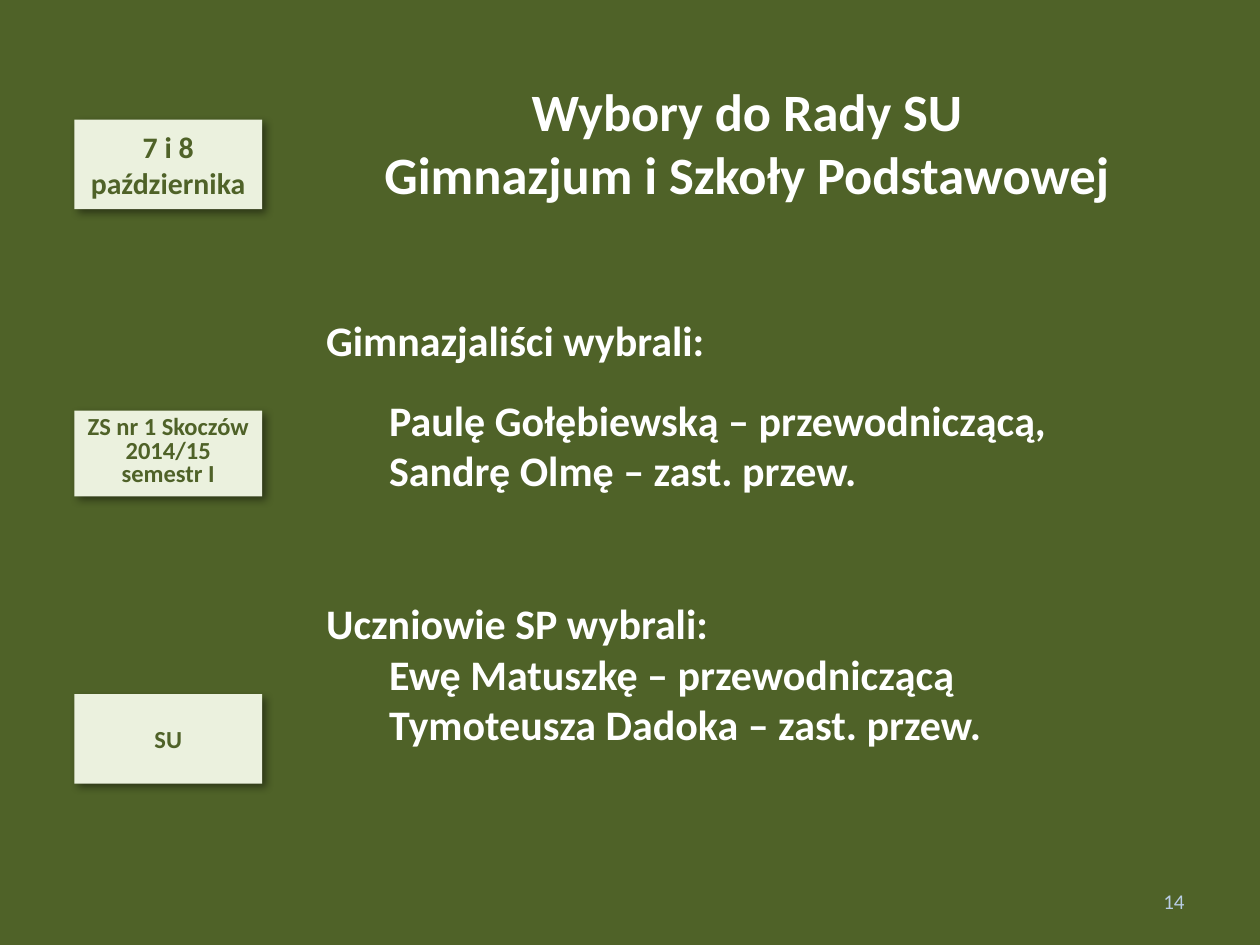
from dataclasses import dataclass

from lxml import etree
from pptx import Presentation
from pptx.dml.color import RGBColor
from pptx.enum.shapes import MSO_SHAPE
from pptx.enum.text import MSO_ANCHOR, PP_ALIGN
from pptx.oxml.ns import qn
from pptx.util import Inches, Pt

RECTANGLE = MSO_SHAPE.RECTANGLE
TOP, MIDDLE = MSO_ANCHOR.TOP, MSO_ANCHOR.MIDDLE
LEFT, CENTER, RIGHT = PP_ALIGN.LEFT, PP_ALIGN.CENTER, PP_ALIGN.RIGHT


@dataclass(frozen=True)
class Theme:
    font: str = "Calibri"
    green: RGBColor = RGBColor(0x4F, 0x62, 0x28)
    pale: RGBColor = RGBColor(0xEB, 0xF1, 0xDE)
    white: RGBColor = RGBColor(0xFF, 0xFF, 0xFF)
    number: RGBColor = RGBColor(0xB9, 0xCD, 0xE5)
    title_size: Pt = Pt(30)
    body_size: Pt = Pt(24)
    date_size: Pt = Pt(17)
    tag_size: Pt = Pt(14)
    number_size: Pt = Pt(12)


THEME = Theme()


def write_lines(frame, lines, size, color, align, anchor=MIDDLE, bold=True):
    """Fill a text frame with one paragraph per line and return the paragraphs."""
    frame.word_wrap = True
    frame.vertical_anchor = anchor
    frame.text = "\n".join(lines)
    for paragraph in frame.paragraphs:
        paragraph.alignment = align
        font = paragraph.font
        font.name, font.size, font.bold = THEME.font, size, bold
        font.color.rgb = color
    return frame.paragraphs


def add_panel(slide, box, fill):
    panel = slide.shapes.add_shape(RECTANGLE, *map(Inches, box))
    panel.shadow.inherit = False
    panel.fill.solid()
    panel.fill.fore_color.rgb = fill
    panel.line.fill.background()
    return panel


def add_drop_shadow(panel):
    effects = panel._element.spPr.find(qn("a:effectLst"))
    shadow = etree.SubElement(
        effects, qn("a:outerShdw"), blurRad=str(Pt(5)), dist=str(Pt(3)),
        dir=str(45 * 60000), algn="tl", rotWithShape="0")
    black = etree.SubElement(shadow, qn("a:srgbClr"), val="000000")
    etree.SubElement(black, qn("a:alpha"), val="43000")


def add_tag(slide, box, lines, size, anchor=MIDDLE, spacing=1.0):
    tag = add_panel(slide, box, THEME.pale)
    add_drop_shadow(tag)
    for line in write_lines(tag.text_frame, lines, size, THEME.green, CENTER, anchor):
        line.line_spacing = spacing


def add_title(slide, box):
    title = add_panel(slide, box, THEME.green)
    lines = ["Wybory do Rady SU", "Gimnazjum i Szkoły Podstawowej"]
    write_lines(title.text_frame, lines, THEME.title_size, THEME.white, CENTER)


def add_results(slide, box):
    results = add_panel(slide, box, THEME.green)
    # (text, is a name, space before in points)
    entries = [
        ("Gimnazjaliści wybrali:", False, 0),
        ("Paulę Gołębiewską – przewodniczącą,", True, 17),
        ("Sandrę Olmę – zast. przew.", True, 0),
        ("Uczniowie SP wybrali:", False, 58.5),
        ("Ewę Matuszkę – przewodniczącą", True, 0),
        ("Tymoteusza Dadoka – zast. przew.", True, 0),
    ]
    frame = results.text_frame
    frame.margin_bottom = Inches(0.46)
    lines = write_lines(frame, [text for text, _, _ in entries],
                        THEME.body_size, THEME.white, LEFT)
    for line, (_, is_name, gap) in zip(lines, entries):
        if is_name:
            line._p.get_or_add_pPr().set("marL", str(Inches(0.5)))
        if gap:
            line.space_before = Pt(gap)


def add_page_number(slide, box):
    number = slide.shapes.add_textbox(*map(Inches, box))
    write_lines(number.text_frame, ["14"], THEME.number_size, THEME.number,
                RIGHT, bold=False)


def main():
    prs = Presentation()
    prs.slide_width, prs.slide_height = Inches(10), Inches(7.5)
    slide = prs.slides.add_slide(prs.slide_layouts[6])
    slide.background.fill.solid()
    slide.background.fill.fore_color.rgb = THEME.green

    # Main column
    add_title(slide, (2.49, 0.49, 6.88, 1.27))
    add_results(slide, (2.49, 2.1, 7.13, 4.65))

    # Tags in the left column
    tag_left, tag_width = 0.59, 1.49
    add_tag(slide, (tag_left, 0.95, tag_width, 0.71),
            ["7 i 8", "października"], THEME.date_size)
    add_tag(slide, (tag_left, 3.26, tag_width, 0.68),
            ["ZS nr 1 Skoczów 2014/15", "semestr I"], THEME.tag_size, TOP, 0.8)
    add_tag(slide, (tag_left, 5.51, tag_width, 0.71), ["SU"], THEME.tag_size)

    # Footer
    add_page_number(slide, (7.17, 6.95, 2.33, 0.4))
    prs.save("out.pptx")


if __name__ == "__main__":
    main()
